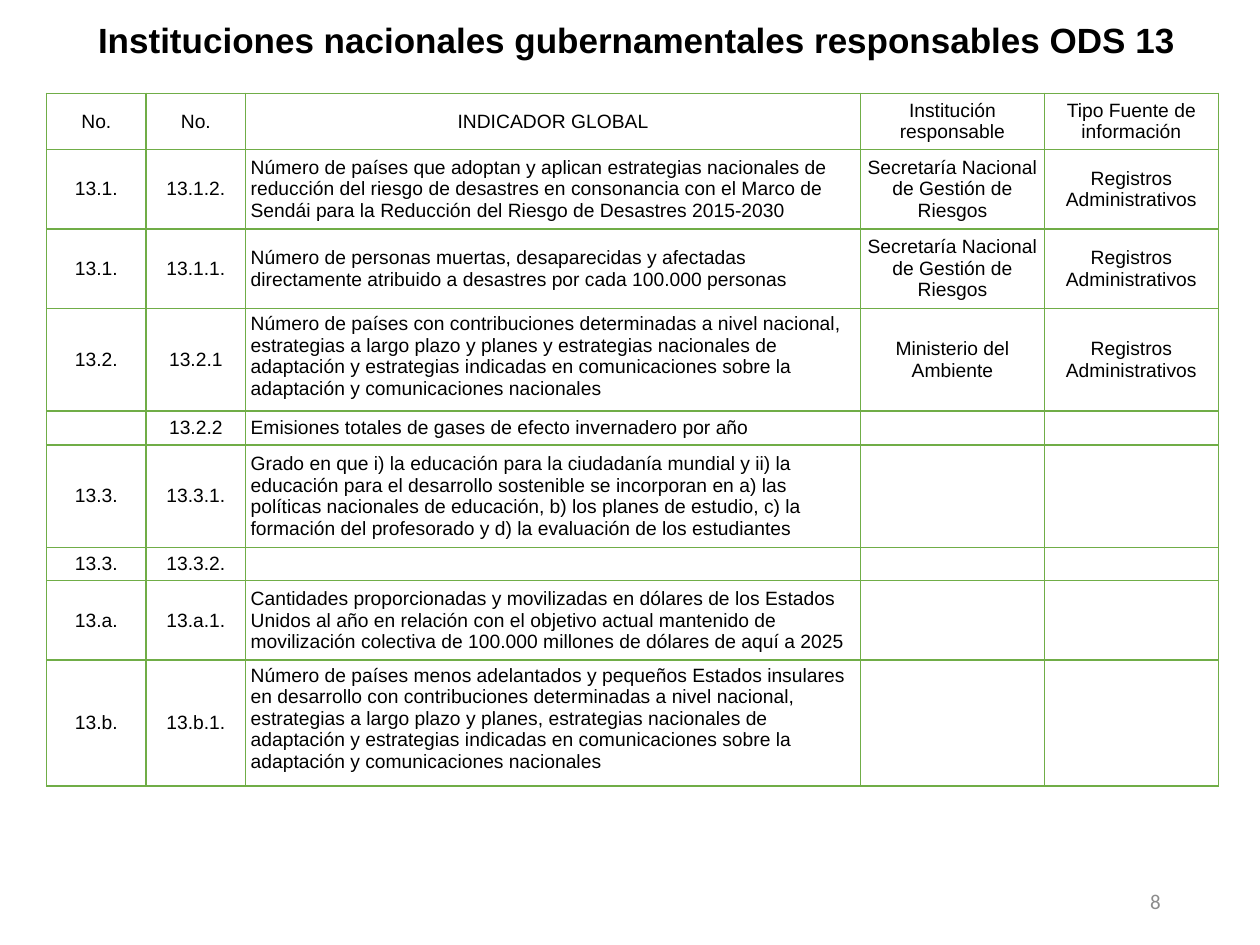
from pptx import Presentation
from pptx.dml.color import RGBColor
from pptx.enum.text import MSO_ANCHOR as Anchor, PP_ALIGN as Align
from pptx.oxml.ns import qn
from pptx.util import Inches, Pt
from lxml.etree import SubElement

COLORS = {"text": "000000", "border": "70AD47", "number": "8C8C8C"}
CELL_SIZE = 11
CELL_MARGIN = Inches(0.04)
INDICATOR_COLUMN = 2
COLUMN_WIDTHS = [0.79, 0.79, 4.88, 1.46, 1.38]
ROW_HEIGHTS = [0.44, 0.63, 0.63, 0.81, 0.27, 0.81, 0.26, 0.63, 1.0]
TOP_ANCHORED_ROWS = (3, 8)

RISK_OFFICE = "Secretaría Nacional de Gestión de Riesgos"
RECORDS = "Registros Administrativos"
ROWS = [
    ("No.", "No.", "INDICADOR GLOBAL", "Institución responsable",
     "Tipo Fuente de información"),
    ("13.1.", "13.1.2.",
     "Número de países que adoptan y aplican estrategias nacionales de "
     "reducción del riesgo de desastres en consonancia con el Marco de "
     "Sendái para la Reducción del Riesgo de Desastres 2015‑2030",
     RISK_OFFICE, RECORDS),
    ("13.1.", "13.1.1.",
     "Número de personas muertas, desaparecidas y afectadas directamente "
     "atribuido a desastres por cada 100.000 personas",
     RISK_OFFICE, RECORDS),
    ("13.2.", "13.2.1",
     "Número de países con contribuciones determinadas a nivel nacional, "
     "estrategias a largo plazo y planes y estrategias nacionales de "
     "adaptación y estrategias indicadas en comunicaciones sobre la "
     "adaptación y comunicaciones nacionales",
     "Ministerio del Ambiente", RECORDS),
    ("", "13.2.2", "Emisiones totales de gases de efecto invernadero por año",
     "", ""),
    ("13.3.", "13.3.1.",
     "Grado en que i) la educación para la ciudadanía mundial y ii) la "
     "educación para el desarrollo sostenible se incorporan en a) las "
     "políticas nacionales de educación, b) los planes de estudio, c) la "
     "formación del profesorado y d) la evaluación de los estudiantes",
     "", ""),
    ("13.3.", "13.3.2.", "", "", ""),
    ("13.a.", "13.a.1.",
     "Cantidades proporcionadas y movilizadas en dólares de los Estados "
     "Unidos al año en relación con el objetivo actual mantenido de "
     "movilización colectiva de 100.000 millones de dólares de aquí a 2025",
     "", ""),
    ("13.b.", "13.b.1.",
     "Número de países menos adelantados y pequeños Estados insulares en "
     "desarrollo con contribuciones determinadas a nivel nacional, "
     "estrategias a largo plazo y planes, estrategias nacionales de "
     "adaptación y estrategias indicadas en comunicaciones sobre la "
     "adaptación y comunicaciones nacionales",
     "", ""),
]


def write(frame, text, size, align, font="Arial", color="text", bold=False):
    frame.text = text
    para = frame.paragraphs[0]
    para.alignment = align
    for span in para.runs:
        span.font.name = font
        span.font.size = Pt(size)
        span.font.bold = bold
        span.font.color.rgb = RGBColor.from_string(COLORS[color])
    if not text:
        # An empty cell needs the small size too, or its row grows
        SubElement(para._p, qn("a:endParaRPr"), sz=str(size * 100))


def add_text(page, place, text, size, align, anchor=Anchor.TOP, **style):
    box = page.shapes.add_textbox(*map(Inches, place))
    box.text_frame.word_wrap = True
    box.text_frame.vertical_anchor = anchor
    write(box.text_frame, text, size, align, **style)


def set_borders(cell):
    properties = cell._tc.get_or_add_tcPr()
    for side in ("a:lnL", "a:lnR", "a:lnT", "a:lnB"):
        line = SubElement(properties, qn(side), w=str(Pt(1)))
        fill = SubElement(line, qn("a:solidFill"))
        SubElement(fill, qn("a:srgbClr"), val=COLORS["border"])


def format_cell(cell, text, align, anchor):
    cell.margin_left = cell.margin_right = CELL_MARGIN
    cell.margin_top = cell.margin_bottom = CELL_MARGIN
    cell.vertical_anchor = anchor
    write(cell.text_frame, text, CELL_SIZE, align)
    set_borders(cell)
    cell.fill.background()


def add_indicator_table(page):
    table = page.shapes.add_table(
        len(ROWS), len(COLUMN_WIDTHS), Inches(0.37), Inches(0.74),
        Inches(sum(COLUMN_WIDTHS)), Inches(sum(ROW_HEIGHTS))).table
    table.first_row = table.horz_banding = False
    for column, width in zip(table.columns, COLUMN_WIDTHS):
        column.width = Inches(width)
    for row, height in zip(table.rows, ROW_HEIGHTS):
        row.height = Inches(height)
    for r, texts in enumerate(ROWS):
        for c, text in enumerate(texts):
            is_indicator = r > 0 and c == INDICATOR_COLUMN
            at_top = is_indicator and r in TOP_ANCHORED_ROWS
            format_cell(table.cell(r, c), text,
                        Align.LEFT if is_indicator else Align.CENTER,
                        Anchor.TOP if at_top else Anchor.MIDDLE)


def main():
    deck = Presentation()
    deck.slide_width, deck.slide_height = Inches(10), Inches(7.5)
    page = deck.slides.add_slide(deck.slide_layouts[6])

    # Title
    add_text(page, (0.37, 0.1, 9.37, 0.44),
             "Instituciones nacionales gubernamentales responsables ODS 13",
             20, Align.CENTER, bold=True)
    # Slide number
    add_text(page, (7.06, 6.95, 2.25, 0.4), "8", 12, Align.RIGHT,
             Anchor.MIDDLE, font="Calibri", color="number")
    # Indicators and the institutions in charge of them
    add_indicator_table(page)

    deck.save("out.pptx")


if __name__ == "__main__":
    main()
